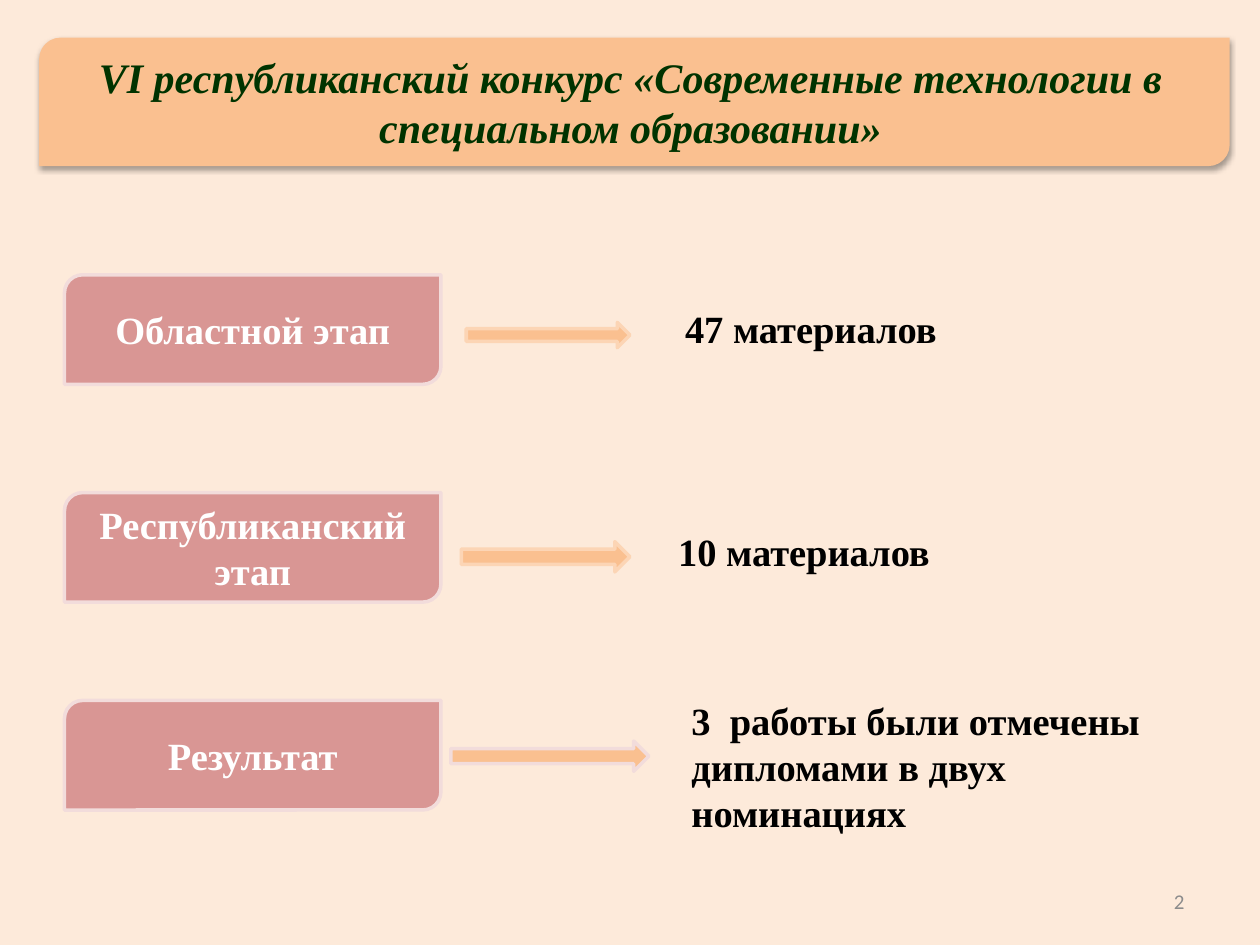
from typing import NamedTuple

from lxml.etree import SubElement
from pptx import Presentation
from pptx.dml.color import RGBColor
from pptx.enum.shapes import MSO_SHAPE
from pptx.enum.text import MSO_ANCHOR, PP_ALIGN
from pptx.oxml.ns import qn
from pptx.util import Cm, Pt

PEACH = "FAC090"
ROSE = "D99694"
PALE_ROSE = "F2DCDB"
PALE_PEACH = "FCD5B5"
SERIF = "Times New Roman"


class Box(NamedTuple):
    left: float
    top: float
    width: float
    height: float


class TextStyle(NamedTuple):
    size: float
    color: str
    font: str = SERIF
    bold: bool = True
    italic: bool = False
    align: PP_ALIGN = PP_ALIGN.LEFT
    anchor: MSO_ANCHOR = MSO_ANCHOR.TOP


class Stage(NamedTuple):
    name: str
    top: float
    result: str
    result_box: Box
    arrow_box: Box
    arrow_line: str


TITLE = TextStyle(24, "003300", italic=True, align=PP_ALIGN.CENTER)
LABEL = TextStyle(22, "FFFFFF", align=PP_ALIGN.CENTER, anchor=MSO_ANCHOR.MIDDLE)
RESULT = TextStyle(22, "000000")
NUMBER = TextStyle(12, "8C8C8C", "Calibri", False,
                   align=PP_ALIGN.RIGHT, anchor=MSO_ANCHOR.MIDDLE)

STAGES = [
    Stage("Областной этап", 5.54, "47 материалов",
          Box(13.56, 6.02, 10.9, 1.19), Box(9.4, 6.5, 3.3, 0.51), PALE_PEACH),
    Stage("Республиканский этап", 9.93, "10 материалов",
          Box(13.42, 10.52, 11.1, 1.19), Box(9.3, 10.92, 3.4, 0.61), PALE_PEACH),
    Stage("Результат", 14.12, "3  работы были отмечены дипломами в двух номинациях",
          Box(13.69, 13.92, 10.59, 3.07), Box(9.09, 14.94, 3.99, 0.61), PALE_ROSE),
]


def rgb(color: str) -> RGBColor:
    return RGBColor.from_string(color)


def lengths(box: Box) -> list[Cm]:
    return [Cm(value) for value in box]


def write(shape, text: str, style: TextStyle) -> None:
    frame = shape.text_frame
    frame.word_wrap = True
    frame.vertical_anchor = style.anchor
    paragraph = frame.paragraphs[0]
    paragraph.alignment = style.align
    run = paragraph.add_run()
    run.text = text
    run.font.name = style.font
    run.font.size = Pt(style.size)
    run.font.bold = style.bold
    run.font.italic = style.italic
    run.font.color.rgb = rgb(style.color)


def add_text(slide, box: Box, text: str, style: TextStyle) -> None:
    write(slide.shapes.add_textbox(*lengths(box)), text, style)


def add_filled(slide, kind: MSO_SHAPE, box: Box, fill: str, line: str | None = None):
    shape = slide.shapes.add_shape(kind, *lengths(box))
    shape.shadow.inherit = False
    shape.fill.solid()
    shape.fill.fore_color.rgb = rgb(fill)
    if line:
        shape.line.color.rgb = rgb(line)
        shape.line.width = Pt(2)
    else:
        shape.line.fill.background()
    return shape


def add_shadow(shape) -> None:
    effects = shape._element.spPr.find(qn("a:effectLst"))
    shadow = SubElement(effects, qn("a:outerShdw"), blurRad=str(Pt(3.1)),
                        dist=str(Pt(1.8)), dir="5400000", rotWithShape="0")
    color = SubElement(shadow, qn("a:srgbClr"), val="000000")
    SubElement(color, qn("a:alpha"), val="35000")


def add_stage(slide, stage: Stage) -> None:
    label = add_filled(slide, MSO_SHAPE.ROUND_2_DIAG_RECTANGLE,
                       Box(1.3, stage.top, 7.59, 2.21), ROSE, PALE_ROSE)
    write(label, stage.name, LABEL)
    add_text(slide, stage.result_box, stage.result, RESULT)
    add_filled(slide, MSO_SHAPE.RIGHT_ARROW, stage.arrow_box, PEACH, stage.arrow_line)


def main() -> None:
    presentation = Presentation()
    presentation.slide_width = Cm(25.4)
    presentation.slide_height = Cm(19.05)
    slide = presentation.slides.add_slide(presentation.slide_layouts[6])
    slide.background.fill.solid()
    slide.background.fill.fore_color.rgb = rgb("FDEADA")

    banner = add_filled(slide, MSO_SHAPE.ROUND_2_DIAG_RECTANGLE,
                        Box(0.79, 0.76, 24, 2.59), PEACH)
    add_shadow(banner)
    add_text(slide, Box(0.71, 0.91, 24, 2.39),
             "VI республиканский конкурс «Современные технологии в специальном образовании»",
             TITLE)
    add_text(slide, Box(18.21, 17.65, 5.92, 1.02), "2", NUMBER)
    for stage in STAGES:
        add_stage(slide, stage)

    presentation.save("out.pptx")


if __name__ == "__main__":
    main()
